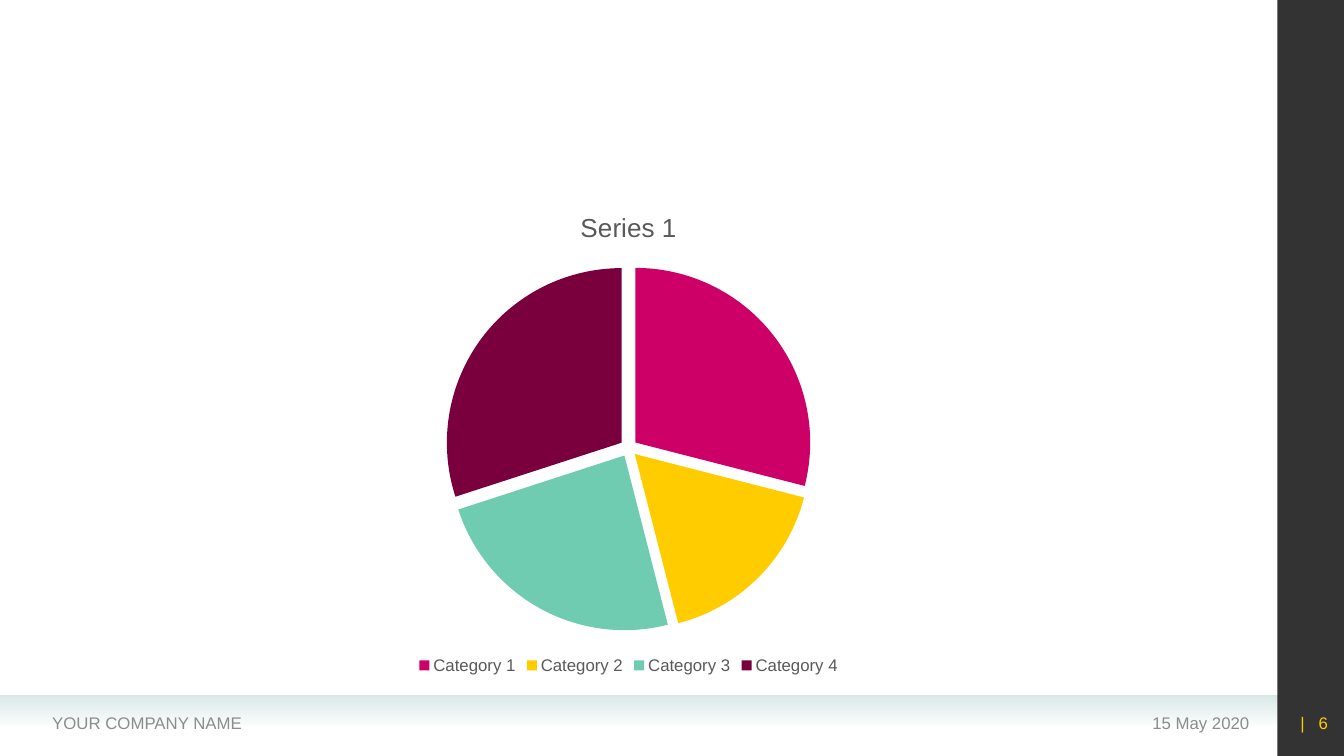
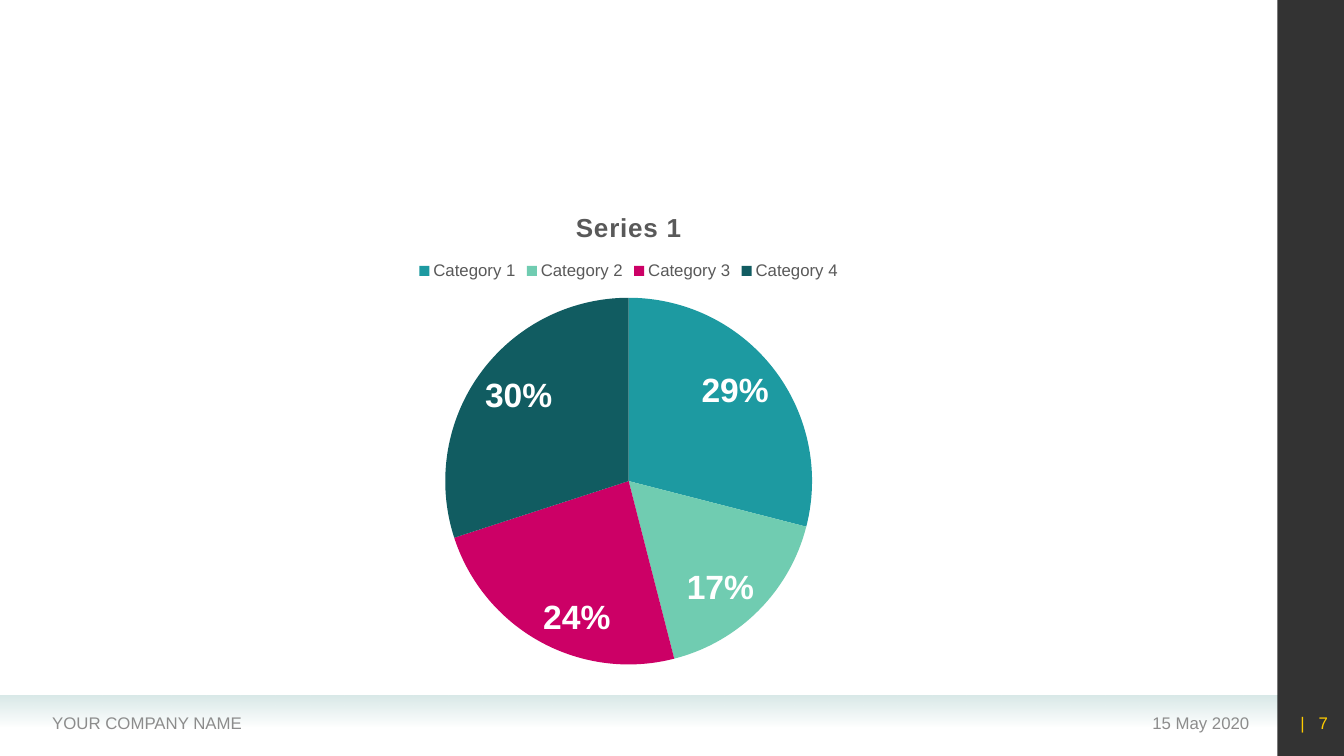
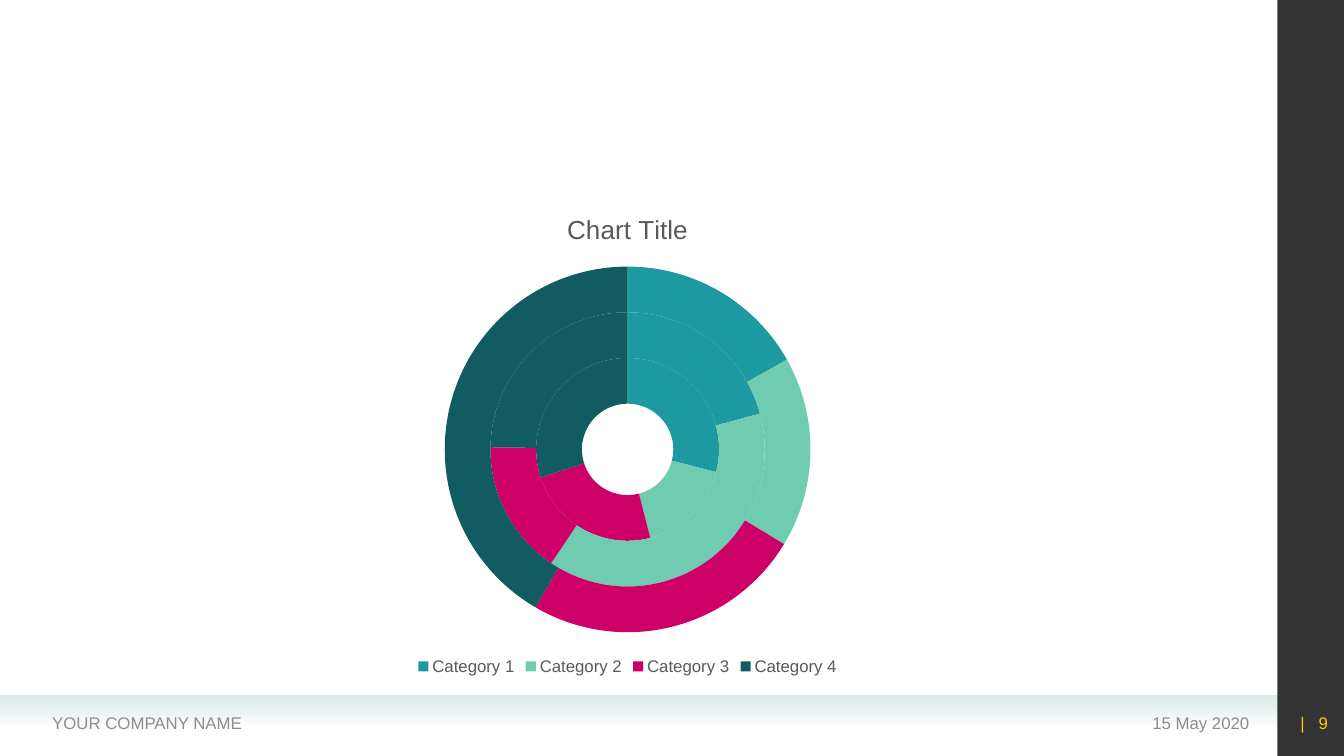
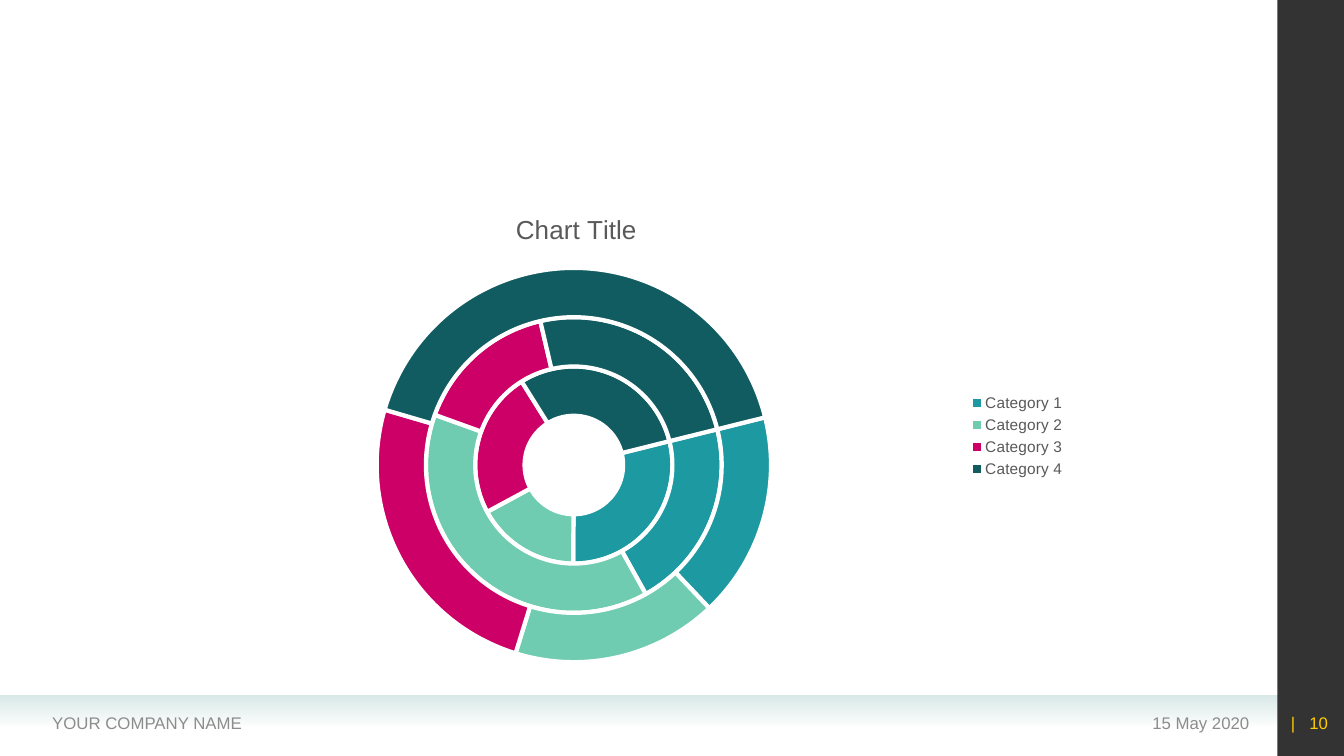
from dataclasses import dataclass
from typing import Optional

from lxml.etree import SubElement
from pptx import Presentation
from pptx.chart.chart import Chart
from pptx.chart.data import CategoryChartData
from pptx.dml.color import RGBColor
from pptx.enum.chart import XL_CHART_TYPE, XL_LABEL_POSITION, XL_LEGEND_POSITION
from pptx.enum.shapes import MSO_SHAPE
from pptx.enum.text import MSO_ANCHOR, PP_ALIGN
from pptx.oxml.ns import qn
from pptx.slide import Slide
from pptx.text.text import Font
from pptx.util import Inches, Pt

FONT = "Arial"
COLORS = {
    "white": "FFFFFF",
    "black": "000000",
    "mist": "D9E9E8",
    "footer": "8C8C8C",
    "chart_text": "595959",
    "yellow": "FFCC00",
    "pink": "CC0066",
    "mint": "70CCB1",
    "plum": "7A003D",
    "teal": "1D9AA1",
    "deep_teal": "115C61",
}
CATEGORIES = [f"Category {number}" for number in range(1, 5)]
SERIES = {
    "Series 1": (29, 17, 24, 30),
    "Series 2": (21, 39, 16, 25),
    "Series 3": (17, 17, 25, 42),
}
WARM = ("pink", "yellow", "mint", "plum")
COOL = ("teal", "mint", "pink", "deep_teal")
PIE_BOX = (1.79, 1.89, 8.89, 4.84)
DOUGHNUT_BOX = (1.78, 1.91, 8.89, 4.83)


@dataclass(frozen=True)
class ChartSlide:
    number: int
    kind: XL_CHART_TYPE
    box: tuple[float, float, float, float]
    title: str
    palette: tuple[str, ...]
    legend: XL_LEGEND_POSITION
    legend_size: int = 12
    bold_title: bool = False
    explosion: int = 0
    percent_sizes: tuple[int, ...] = ()
    border: float = 0
    start_angle: int = 0
    hole: int = 50
    title_layout: Optional[dict[str, float]] = None
    plot_layout: Optional[dict[str, float]] = None


CHART_SLIDES = (
    ChartSlide(6, XL_CHART_TYPE.PIE, PIE_BOX, "Series 1", WARM,
               XL_LEGEND_POSITION.BOTTOM, explosion=5),
    ChartSlide(7, XL_CHART_TYPE.PIE, PIE_BOX, "Series 1", COOL,
               XL_LEGEND_POSITION.TOP, bold_title=True, percent_sizes=(24, 12, 12)),
    ChartSlide(9, XL_CHART_TYPE.DOUGHNUT, DOUGHNUT_BOX, "Chart Title", COOL,
               XL_LEGEND_POSITION.BOTTOM),
    ChartSlide(10, XL_CHART_TYPE.DOUGHNUT, DOUGHNUT_BOX, "Chart Title", COOL,
               XL_LEGEND_POSITION.RIGHT, legend_size=11, border=3,
               start_angle=76, hole=33,
               title_layout={"x": 0.37, "y": 0.03},
               plot_layout={"x": 0.22, "y": 0.15, "w": 0.44, "h": 0.82}),
)


def rgb(name: str) -> RGBColor:
    return RGBColor.from_string(COLORS[name])


def set_font(font: Font, size: float, color: str, bold: bool = False) -> None:
    font.name = FONT
    font.size = Pt(size)
    font.bold = bold
    font.color.rgb = rgb(color)


def set_alpha(color_element, percent: int) -> None:
    SubElement(color_element, qn("a:alpha")).set("val", str(percent * 1000))


def add_band(slide: Slide, left: float, top: float, width: float, height: float):
    band = slide.shapes.add_shape(
        MSO_SHAPE.RECTANGLE, Inches(left), Inches(top), Inches(width), Inches(height))
    band.shadow.inherit = False
    band.line.fill.background()
    return band


def add_footer_text(slide: Slide, left: float, width: float, texts: tuple[str, ...],
                    color: str, align: PP_ALIGN) -> None:
    """Add one footer line; a lone space is widened to three spaces."""
    box = slide.shapes.add_textbox(
        Inches(left), Inches(6.97), Inches(width), Inches(0.4))
    frame = box.text_frame
    frame.word_wrap = True
    frame.vertical_anchor = MSO_ANCHOR.MIDDLE
    paragraph = frame.paragraphs[0]
    paragraph.alignment = align
    for text in texts:
        run = paragraph.add_run()
        run.text = text
        set_font(run.font, 12, color)
        if text == " ":
            run.font._element.set("spc", "667")


def add_frame(slide: Slide, number: int) -> None:
    """Draw the bands and footer that every slide shares."""
    footer_band = add_band(slide, 0, 6.9, 12.67, 0.31)
    footer_band.fill.gradient()
    footer_band.fill.gradient_angle = 270
    for stop, position in zip(footer_band.fill.gradient_stops, (0, 1)):
        stop.position = position
        stop.color.rgb = rgb("mist")
    last_stop = footer_band._element.spPr.findall(".//" + qn("a:srgbClr"))[-1]
    set_alpha(last_stop, 0)

    side_band = add_band(slide, 12.67, 0, 0.67, 7.5)
    side_band.fill.solid()
    side_band.fill.fore_color.rgb = rgb("black")
    set_alpha(side_band._element.spPr.find(".//" + qn("a:srgbClr")), 80)

    add_footer_text(slide, 9.1, 3.39, ("15 May 2020",), "footer", PP_ALIGN.RIGHT)
    add_footer_text(slide, 0.42, 4.9, ("YOUR COMPANY NAME",), "footer", PP_ALIGN.LEFT)
    add_footer_text(slide, 12.6, 0.67, ("|", " ", str(number)), "yellow", PP_ALIGN.RIGHT)


def set_layout(parent, fractions: dict[str, float]) -> None:
    """Place a chart part by fractions of the chart area."""
    manual = SubElement(parent.find(qn("c:layout")), qn("c:manualLayout"))
    if "w" in fractions:
        SubElement(manual, qn("c:layoutTarget")).set("val", "inner")
    for axis in ("x", "y"):
        SubElement(manual, qn(f"c:{axis}Mode")).set("val", "edge")
    for key, value in fractions.items():
        SubElement(manual, qn(f"c:{key}")).set("val", str(value))


def style_title(chart: Chart, design: ChartSlide) -> None:
    chart.has_title = True
    run = chart.chart_title.text_frame.paragraphs[0].add_run()
    run.text = design.title
    set_font(run.font, 18.6, "chart_text", design.bold_title)
    if design.bold_title:
        run.font._element.set("spc", "50")
    if design.title_layout:
        set_layout(chart.chart_title._element, design.title_layout)


def style_series(chart: Chart, design: ChartSlide) -> None:
    for index, series in enumerate(chart.plots[0].series):
        for point_index, color in enumerate(design.palette):
            point_format = series.points[point_index].format
            point_format.fill.solid()
            point_format.fill.fore_color.rgb = rgb(color)
            if design.border:
                point_format.line.color.rgb = rgb("white")
                point_format.line.width = Pt(design.border)
            else:
                point_format.line.fill.background()
        if design.explosion:
            explosion = SubElement(series._element, qn("c:explosion"))
            explosion.set("val", str(design.explosion))
            series._element.find(qn("c:dPt")).addprevious(explosion)
        if design.percent_sizes:
            labels = series.data_labels
            labels.show_percentage = True
            labels.show_value = False
            labels.number_format = "0%"
            labels.number_format_is_linked = False
            labels.position = XL_LABEL_POSITION.INSIDE_END
            set_font(labels.font, design.percent_sizes[index], "white", bold=True)


def add_ring_chart(slide: Slide, design: ChartSlide) -> None:
    data = CategoryChartData()
    data.categories = CATEGORIES
    for name, values in SERIES.items():
        data.add_series(name, values)
    chart = slide.shapes.add_chart(
        design.kind, *(Inches(length) for length in design.box), data).chart
    # A new pie holds only its first series; replacing the data adds the rest.
    chart.replace_data(data)
    set_font(chart.font, 10, "black")
    chart.plots[0].vary_by_categories = True
    style_title(chart, design)
    style_series(chart, design)

    chart.has_legend = True
    chart.legend.position = design.legend
    chart.legend.include_in_layout = False
    set_font(chart.legend.font, design.legend_size, "chart_text")

    if design.kind == XL_CHART_TYPE.DOUGHNUT:
        plot_element = chart.plots[0]._element
        plot_element.find(qn("c:firstSliceAng")).set("val", str(design.start_angle))
        plot_element.find(qn("c:holeSize")).set("val", str(design.hole))
    if design.plot_layout:
        set_layout(chart._chartSpace.find(".//" + qn("c:plotArea")), design.plot_layout)


def main() -> None:
    presentation = Presentation()
    presentation.slide_width = Inches(13.33)
    presentation.slide_height = Inches(7.5)
    blank_layout = presentation.slide_layouts[6]
    for design in CHART_SLIDES:
        slide = presentation.slides.add_slide(blank_layout)
        add_frame(slide, design.number)
        add_ring_chart(slide, design)
    presentation.save("out.pptx")


if __name__ == "__main__":
    main()
